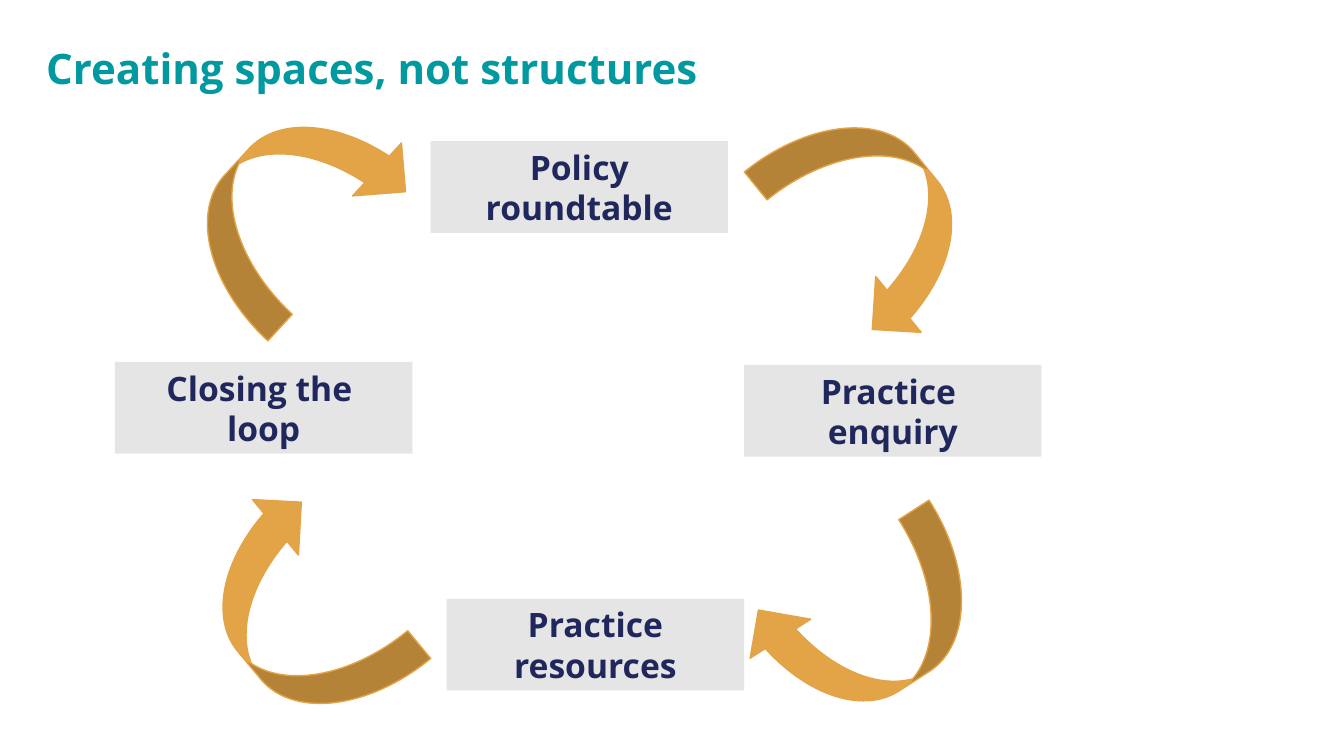
from pptx import Presentation
from pptx.dml.color import RGBColor
from pptx.enum.shapes import MSO_SHAPE
from pptx.enum.text import MSO_ANCHOR, PP_ALIGN
from pptx.util import Inches, Pt

RECTANGLE = MSO_SHAPE.RECTANGLE
CURVED_ARROW = MSO_SHAPE.CURVED_LEFT_ARROW
MIDDLE = MSO_ANCHOR.MIDDLE
CENTER = PP_ALIGN.CENTER

FONT = "Open Sans"
TEAL, NAVY, GOLD, GREY = "0099A0", "20275C", "E3A447", "E5E5E5"

TITLE = "Creating spaces, not structures"
TITLE_BOX = (0.36, 0.37, 10.18, 0.61)
STAGE_SIZE = (2.95, 0.91)
STAGES = [
    (["Policy roundtable"], 4.27, 1.4),
    (["Practice ", "enquiry"], 7.38, 3.62),
    (["Practice resources"], 4.43, 5.94),
    (["Closing the ", "loop"], 1.14, 3.59),
]
ARROW_SIZE = (1.43, 2.37)
ARROWS = [
    (7.97, 0.99, 320.9),
    (7.89, 5.02, 57.2),
    (2.25, 4.89, 140.4),
    (2.22, 0.84, 222.7),
]


def color(value):
    return RGBColor.from_string(value)


def inches(*lengths):
    return [Inches(length) for length in lengths]


def write(shape, lines, size, text_color, alignment=None):
    frame = shape.text_frame
    frame.word_wrap = True
    frame.text = "\n".join(lines)
    for paragraph in frame.paragraphs:
        paragraph.alignment = alignment
        paragraph.font.name = FONT
        paragraph.font.size = Pt(size)
        paragraph.font.bold = True
        paragraph.font.color.rgb = color(text_color)


def add_filled(slide, kind, box, fill):
    shape = slide.shapes.add_shape(kind, *inches(*box))
    shape.shadow.inherit = False
    shape.fill.solid()
    shape.fill.fore_color.rgb = color(fill)
    return shape


def add_arrow(slide, left, top, rotation):
    arrow = add_filled(slide, CURVED_ARROW, (left, top, *ARROW_SIZE), GOLD)
    arrow.line.color.rgb = color(GOLD)
    arrow.line.width = Pt(1)
    arrow.rotation = rotation


def add_stage(slide, lines, left, top):
    stage = add_filled(slide, RECTANGLE, (left, top, *STAGE_SIZE), GREY)
    stage.line.fill.background()
    stage.text_frame.vertical_anchor = MIDDLE
    write(stage, lines, 24, NAVY, CENTER)


def main():
    presentation = Presentation()
    presentation.slide_width, presentation.slide_height = inches(13.33, 7.5)
    slide = presentation.slides.add_slide(presentation.slide_layouts[6])
    write(slide.shapes.add_textbox(*inches(*TITLE_BOX)), [TITLE], 30, TEAL)
    for arrow in ARROWS:
        add_arrow(slide, *arrow)
    for stage in STAGES:
        add_stage(slide, *stage)
    presentation.save("out.pptx")


if __name__ == "__main__":
    main()
